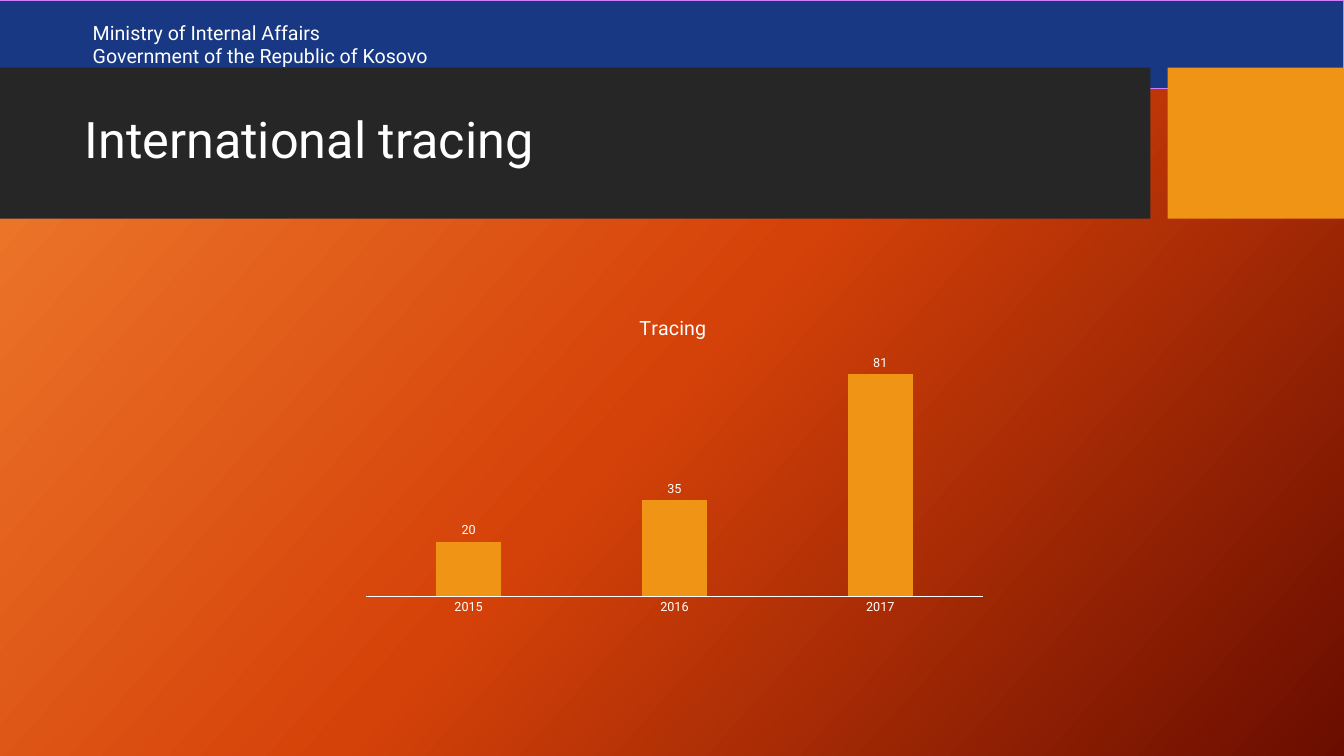
from copy import deepcopy

from lxml.etree import SubElement
from pptx import Presentation
from pptx.chart.data import CategoryChartData
from pptx.dml.color import RGBColor
from pptx.enum.chart import XL_CHART_TYPE as ChartType
from pptx.enum.chart import XL_LABEL_POSITION as LabelPosition
from pptx.enum.chart import XL_TICK_MARK as TickMark
from pptx.enum.shapes import MSO_SHAPE as Shape
from pptx.enum.text import MSO_ANCHOR as Anchor
from pptx.enum.text import PP_ALIGN as Align
from pptx.oxml.ns import qn
from pptx.util import Inches, Pt

COLORS = {
    "light": "F18031",
    "middle": "D54209",
    "deep": "6A0D00",
    "blue": "183883",
    "violet": "D17DF9",
    "dark": "262626",
    "amber": "F09415",
    "white": "FFFFFF",
}


def color(name):
    return RGBColor.from_string(COLORS[name])


def style_font(font, size, name="Roboto", ink="white"):
    font.name = name
    font.size = Pt(size)
    font.bold = False
    font.color.rgb = color(ink)


def write(frame, text, size, left=0.1, spacing=None):
    frame.word_wrap = True
    frame.vertical_anchor = Anchor.MIDDLE
    frame.margin_left = Inches(left)
    for index, line in enumerate(text.split("\n")):
        para = frame.paragraphs[0] if index == 0 else frame.add_paragraph()
        para.alignment = Align.LEFT
        para.line_spacing = spacing
        span = para.add_run()
        span.text = line
        style_font(span.font, size)


def place(parent, inner=False, **values):
    old = parent.find(qn("c:layout"))
    if old is not None:
        parent.remove(old)
    layout = parent.makeelement(qn("c:layout"))
    manual = SubElement(layout, qn("c:manualLayout"))
    if inner:
        SubElement(manual, qn("c:layoutTarget")).set("val", "inner")
    for mode in ("xMode", "yMode"):
        SubElement(manual, qn(f"c:{mode}")).set("val", "edge")
    for key, value in values.items():
        SubElement(manual, qn(f"c:{key}")).set("val", str(value))
    text = parent.find(qn("c:tx"))
    parent.insert(0 if text is None else 1, layout)


class SlideBuilder:
    def __init__(self, page):
        self.page = page

    def background(self, stops, angle):
        fill = self.page.background.fill
        fill.gradient()
        fill.gradient_angle = 360 - angle
        stop_list = self.page._element.find(".//" + qn("a:gsLst"))
        stop_list.append(deepcopy(stop_list[0]))
        for stop, (position, name) in zip(fill.gradient_stops, stops):
            stop.position = position
            stop.color.rgb = color(name)

    def band(self, bounds, fill, line=None):
        box = self.page.shapes.add_shape(Shape.RECTANGLE, *map(Inches, bounds))
        box.shadow.inherit = False
        box.fill.solid()
        box.fill.fore_color.rgb = color(fill)
        if line:
            box.line.color.rgb = color(line)
            box.line.width = Pt(0.75)
        else:
            box.line.fill.background()
        return box

    def text(self, bounds, text, size, **style):
        box = self.page.shapes.add_textbox(*map(Inches, bounds))
        write(box.text_frame, text, size, **style)

    def column_chart(self, bounds, title, categories, values):
        data = CategoryChartData()
        data.categories = categories
        data.add_series("Series 1", values)
        chart = self.page.shapes.add_chart(
            ChartType.COLUMN_CLUSTERED, *map(Inches, bounds), data).chart
        style_font(chart.font, 10)
        chart.has_legend = False
        chart.has_title = True
        heading = chart.chart_title
        heading.include_in_layout = False
        span = heading.text_frame.paragraphs[0].add_run()
        span.text = title
        style_font(span.font, 14)
        place(heading._element, x=0.44, y=0.05)
        place(chart._chartSpace.chart.plotArea, inner=True,
              x=0.02, y=0.17, w=0.96, h=0.755)

        years = chart.category_axis
        years.major_tick_mark = years.minor_tick_mark = TickMark.NONE
        years.has_major_gridlines = False
        years.format.line.color.rgb = color("white")
        years.format.line.width = Pt(0.75)
        style_font(years.tick_labels.font, 9)
        counts = chart.value_axis
        counts.minimum_scale, counts.maximum_scale = 0, 90
        counts.has_major_gridlines = False
        counts.visible = False

        plot = chart.plots[0]
        plot.gap_width, plot.overlap = 219, -27
        plot.vary_by_categories = False
        series = plot.series[0]
        series.format.fill.solid()
        series.format.fill.fore_color.rgb = color("amber")
        labels = series.data_labels
        labels.show_value = True
        labels.position = LabelPosition.OUTSIDE_END
        style_font(labels.font, 9)


def main():
    deck = Presentation()
    deck.slide_width, deck.slide_height = Inches(13.33), Inches(7.5)
    slide = SlideBuilder(deck.slides.add_slide(deck.slide_layouts[6]))
    slide.background([(0, "light"), (0.5, "middle"), (1, "deep")], 42)
    header = slide.band((0, 0, 13.33, 0.88), "blue", line="violet")
    write(header.text_frame,
          "Ministry of Internal Affairs\nGovernment of the Republic of Kosovo",
          14, left=0.92)
    slide.band((0, 0.67, 11.41, 1.5), "dark")
    slide.band((11.58, 0.67, 1.75, 1.5), "amber")
    slide.text((0.74, 0.82, 10.51, 1.18), "International tracing", 36, spacing=0.9)
    slide.column_chart((3.5, 2.92, 6.38, 3.24), "Tracing",
                       ["2015", "2016", "2017"], [20, 35, 81])
    deck.save("out.pptx")


if __name__ == "__main__":
    main()
